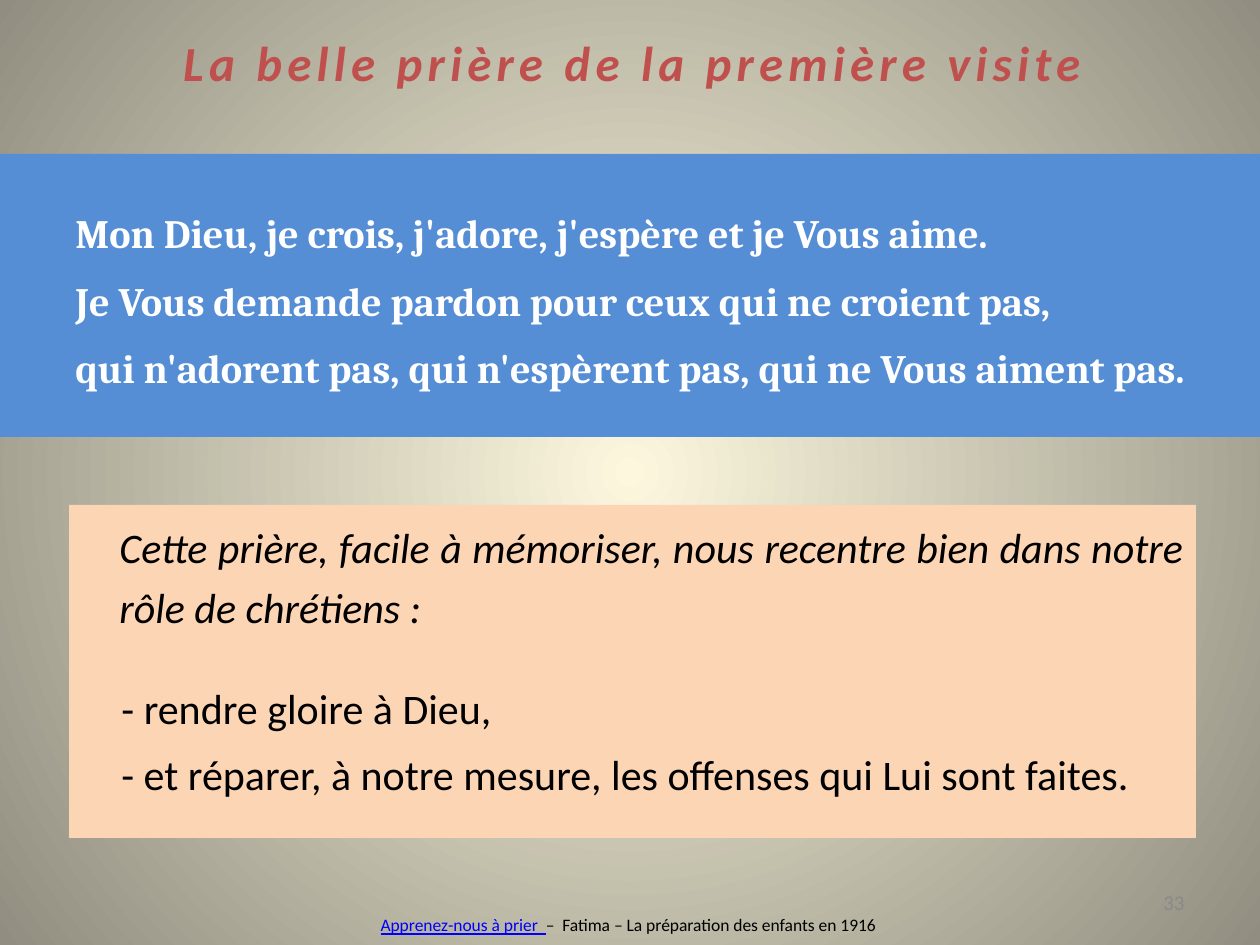
from pptx import Presentation
from pptx.dml.color import RGBColor
from pptx.enum.shapes import MSO_SHAPE
from pptx.enum.text import MSO_ANCHOR, PP_ALIGN
from pptx.oxml import parse_xml
from pptx.oxml.ns import nsdecls, qn
from pptx.util import Emu, Pt

SCALE = 914400 / 126
COLOURS = {
    "centre": "FCF7DD", "edge": "918E81", "title": "C0504D", "prayer": "558ED5",
    "comment": "FCD5B5", "white": "FFFFFF", "black": "000000", "link": "0000FF",
    "number": "898989",
}


def px(length):
    return Emu(round(length * SCALE))


def colour(name):
    return RGBColor.from_string(COLOURS[name])


class PrayerPage:
    def __init__(self, deck):
        self.page = deck.slides.add_slide(deck.slide_layouts[6])

    def background(self, centre, edge):
        fill = self.page.background.fill
        fill.gradient()
        for stop, name, position in zip(fill.gradient_stops, (centre, edge), (0, 1)):
            stop.color.rgb = colour(name)
            stop.position = position
        linear = next(self.page.element.iter(qn("a:lin")))
        linear.getparent().replace(linear, parse_xml(
            f'<a:path {nsdecls("a")} path="circle">'
            '<a:fillToRect l="50000" t="50000" r="50000" b="50000"/></a:path>'))

    def text(self, left, top, width, height, wrap=True):
        box = self.page.shapes.add_textbox(px(left), px(top), px(width), px(height))
        box.text_frame.word_wrap = wrap
        return box.text_frame

    def panel(self, left, top, width, height, fill):
        box = self.page.shapes.add_shape(
            MSO_SHAPE.RECTANGLE, px(left), px(top), px(width), px(height))
        box.shadow.inherit = False
        box.fill.solid()
        box.fill.fore_color.rgb = colour(fill)
        box.line.fill.background()
        box.text_frame.word_wrap = True
        box.text_frame.vertical_anchor = MSO_ANCHOR.TOP
        return box.text_frame

    def para(self, frame, align=PP_ALIGN.LEFT, spacing=1.0, margin=0, indent=0, level=0):
        first = frame.paragraphs[0]
        para = frame.add_paragraph() if first.runs else first
        para.alignment = align
        para.line_spacing = spacing
        para.level = level
        properties = para._p.get_or_add_pPr()
        properties.set("marL", str(px(margin)))
        properties.set("indent", str(px(indent)))
        return para

    def span(self, para, text, size, fill, font="Calibri", bold=False, italic=False,
             underline=False, tracking=0):
        span = para.add_run()
        span.text = text
        span.font.name = font
        span.font.size = Pt(size)
        span.font.bold = bold
        span.font.italic = italic
        span.font.underline = underline
        span.font.color.rgb = colour(fill)
        if tracking:
            span._r.get_or_add_rPr().set("spc", str(tracking * 100))


def main():
    deck = Presentation()
    deck.slide_width, deck.slide_height = px(1260), px(945)
    page = PrayerPage(deck)
    page.background("centre", "edge")

    title = page.para(page.text(131, 26, 1003, 72), PP_ALIGN.CENTER)
    page.span(title, "La belle prière de la première visite", 28, "title",
              bold=True, italic=True, tracking=3)

    prayer = page.panel(0, 154, 1260, 283, "prayer")
    for line, spacing in (
        ("Mon Dieu, je crois, j'adore, j'espère et je Vous aime.", 2.0),
        ("Je Vous demande pardon pour ceux qui ne croient pas,", 1.4),
        ("qui n'adorent pas, qui n'espèrent pas, qui ne Vous aiment pas.", 1.4),
    ):
        para = page.para(prayer, spacing=spacing, margin=63, level=1)
        page.span(para, line, 23, "white", font="Cambria", bold=True)

    comment = page.panel(69, 505, 1127, 333, "comment")
    for line, spacing, margin, indent, level in (
        ("Cette prière, facile à mémoriser, nous recentre bien dans notre "
         "rôle de chrétiens : ", 1.2, 38, 0, 0),
        ("- rendre gloire à Dieu,", 2.0, 87, -47, 1),
        ("- et réparer, à notre mesure, les offenses qui Lui sont faites.", 1.3, 40, 0, 1),
    ):
        para = page.para(comment, PP_ALIGN.JUSTIFY, spacing, margin, indent, level)
        page.span(para, line, 24, "black", italic=level == 0)

    number = page.para(page.text(1071, 883, 126, 38), PP_ALIGN.RIGHT)
    page.span(number, "33", 12, "number")

    footer = page.para(page.text(363, 908, 534, 34, wrap=False), PP_ALIGN.CENTER)
    page.span(footer, "Apprenez-nous à prier  ", 10, "link", underline=True)
    page.span(footer, "–  Fatima – La préparation des enfants en 1916 ", 10, "black")

    deck.save("out.pptx")


if __name__ == "__main__":
    main()
